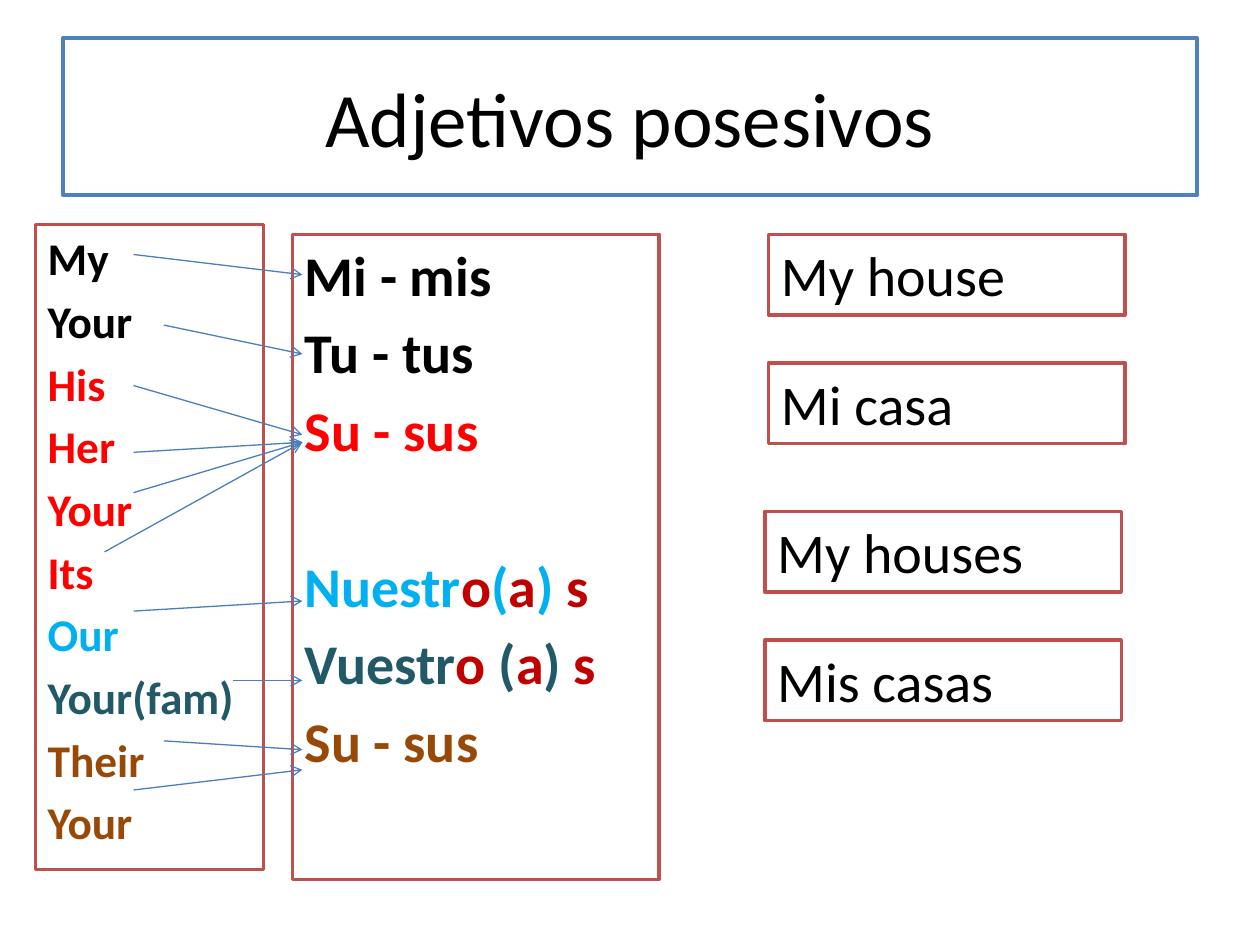
from dataclasses import dataclass

from lxml import etree
from pptx import Presentation
from pptx.dml.color import RGBColor
from pptx.enum.shapes import MSO_CONNECTOR
from pptx.enum.text import MSO_ANCHOR, PP_ALIGN
from pptx.oxml.ns import qn
from pptx.util import Inches, Pt

STRAIGHT = MSO_CONNECTOR.STRAIGHT
TOP, MIDDLE = MSO_ANCHOR.TOP, MSO_ANCHOR.MIDDLE
LEFT, CENTER = PP_ALIGN.LEFT, PP_ALIGN.CENTER
TITLE_ONLY = 5


@dataclass(frozen=True)
class Theme:
    font: str = "Calibri"
    title_size: float = 44
    english_size: float = 25.9
    spanish_size: float = 32
    example_size: float = 32
    paper: str = "FFFFFF"
    ink: str = "000000"
    title_border: str = "4F81BD"
    border: str = "C0504D"
    arrow: str = "4B7EBC"
    third: str = "FF0000"
    we: str = "00B0F0"
    you_all: str = "215968"
    they: str = "984807"
    ending: str = "C00000"
    border_width: float = 2
    arrow_width: float = 0.75


THEME = Theme()

ENGLISH = [
    ("My", THEME.ink), ("Your", THEME.ink),
    ("His", THEME.third), ("Her", THEME.third),
    ("Your", THEME.third), ("Its", THEME.third),
    ("Our", THEME.we), ("Your(fam)", THEME.you_all),
    ("Their", THEME.they), ("Your", THEME.they),
]


def plural_forms(stem, ending, color):
    return [(stem, color), (ending, THEME.ending), ("(", color),
            ("a", THEME.ending), (") ", color), ("s", THEME.ending)]


SPANISH_SINGULAR = [
    [("Mi - mis", THEME.ink)],
    [("Tu - tus", THEME.ink)],
    [("Su - sus", THEME.third)],
]
SPANISH_PLURAL = [
    plural_forms("Nuestr", "o", THEME.we),
    plural_forms("Vuestr", "o ", THEME.you_all),
    [("Su - sus", THEME.they)],
]

LINKS = [
    (0.4, [(0.78, 0.24)]),
    (1.03, [(1.02, 0.8)]),
    (1.67, [(0.78, 1.28)]),
    (1.73, [(0.78, 1.81), (0.78, 2.13), (0.55, 2.6)]),
    (2.99, [(0.78, 3.07)]),
    (3.62, [(1.57, 3.62)]),
    (4.17, [(1.02, 4.1)]),
    (4.33, [(0.78, 4.49)]),
]
LINK_END = 2.12


def write_text(shape, lines, *, size, bold=False, align=LEFT, anchor=TOP, gaps=None):
    frame = shape.text_frame
    frame.word_wrap = True
    frame.vertical_anchor = anchor
    for index, line in enumerate(lines):
        paragraph = frame.add_paragraph() if index else frame.paragraphs[0]
        paragraph.alignment = align
        paragraph.space_before = Pt(gaps[index] if gaps else 0)
        for text, color in line:
            run = paragraph.add_run()
            run.text = text
            run.font.name = THEME.font
            run.font.size = Pt(size)
            run.font.bold = bold
            run.font.color.rgb = RGBColor.from_string(color)


def frame_panel(shape, border):
    shape.fill.solid()
    shape.fill.fore_color.rgb = RGBColor.from_string(THEME.paper)
    shape.line.color.rgb = RGBColor.from_string(border)
    shape.line.width = Pt(THEME.border_width)


def add_panel(slide, left, top, width, height, lines, **text_format):
    panel = slide.shapes.add_textbox(left, top, width, height)
    frame_panel(panel, THEME.border)
    write_text(panel, lines, **text_format)


def add_arrow(slide, start_x, start_y, end_x, end_y):
    arrow = slide.shapes.add_connector(STRAIGHT, start_x, start_y, end_x, end_y)
    arrow.line.color.rgb = RGBColor.from_string(THEME.arrow)
    arrow.line.width = Pt(THEME.arrow_width)
    etree.SubElement(arrow.line._get_or_add_ln(), qn("a:tailEnd"), type="arrow")
    etree.SubElement(arrow._element.spPr, qn("a:effectLst"))


def place_title(slide, left, top, width, height):
    title = slide.shapes.title
    title.left, title.top, title.width, title.height = left, top, width, height
    frame_panel(title, THEME.title_border)
    write_text(title, [[("Adjetivos posesivos", THEME.ink)]],
               size=THEME.title_size, align=CENTER, anchor=MIDDLE)


def place_english(slide, left, top, width, height):
    add_panel(slide, left, top, width, height, [[word] for word in ENGLISH],
              size=THEME.english_size, bold=True,
              gaps=[0] + [4.7] * (len(ENGLISH) - 1))


def place_spanish(slide, left, top, width, height):
    gap, section_gap = 5.8, 50.7
    add_panel(slide, left, top, width, height, SPANISH_SINGULAR + SPANISH_PLURAL,
              size=THEME.spanish_size, bold=True,
              gaps=[0, gap, gap, section_gap, gap, gap])


def place_links(slide, left, top):
    for end_y, starts in LINKS:
        for start_x, start_y in starts:
            add_arrow(slide, left + Inches(start_x), top + Inches(start_y),
                      left + Inches(LINK_END), top + Inches(end_y))


def place_examples(slide, left, top, width, height, phrases):
    for index, phrase in enumerate(phrases):
        add_panel(slide, left, top + index * Inches(1.02), width, height,
                  [[(phrase, THEME.ink)]], size=THEME.example_size)


def main():
    deck = Presentation()
    deck.slide_width, deck.slide_height = Inches(10), Inches(7.5)
    slide = deck.slides.add_slide(deck.slide_layouts[TITLE_ONLY])
    place_title(slide, Inches(0.5), Inches(0.3), Inches(9), Inches(1.25))
    place_english(slide, Inches(0.28), Inches(1.78), Inches(1.81), Inches(5.12))
    place_spanish(slide, Inches(2.32), Inches(1.86), Inches(2.91), Inches(5.12))
    place_links(slide, Inches(0.28), Inches(1.78))
    place_examples(slide, Inches(6.1), Inches(1.86), Inches(2.83), Inches(0.64),
                   ["My house", "Mi casa"])
    place_examples(slide, Inches(6.07), Inches(4.06), Inches(2.83), Inches(0.64),
                   ["My houses", "Mis casas"])
    deck.save("out.pptx")


if __name__ == "__main__":
    main()
